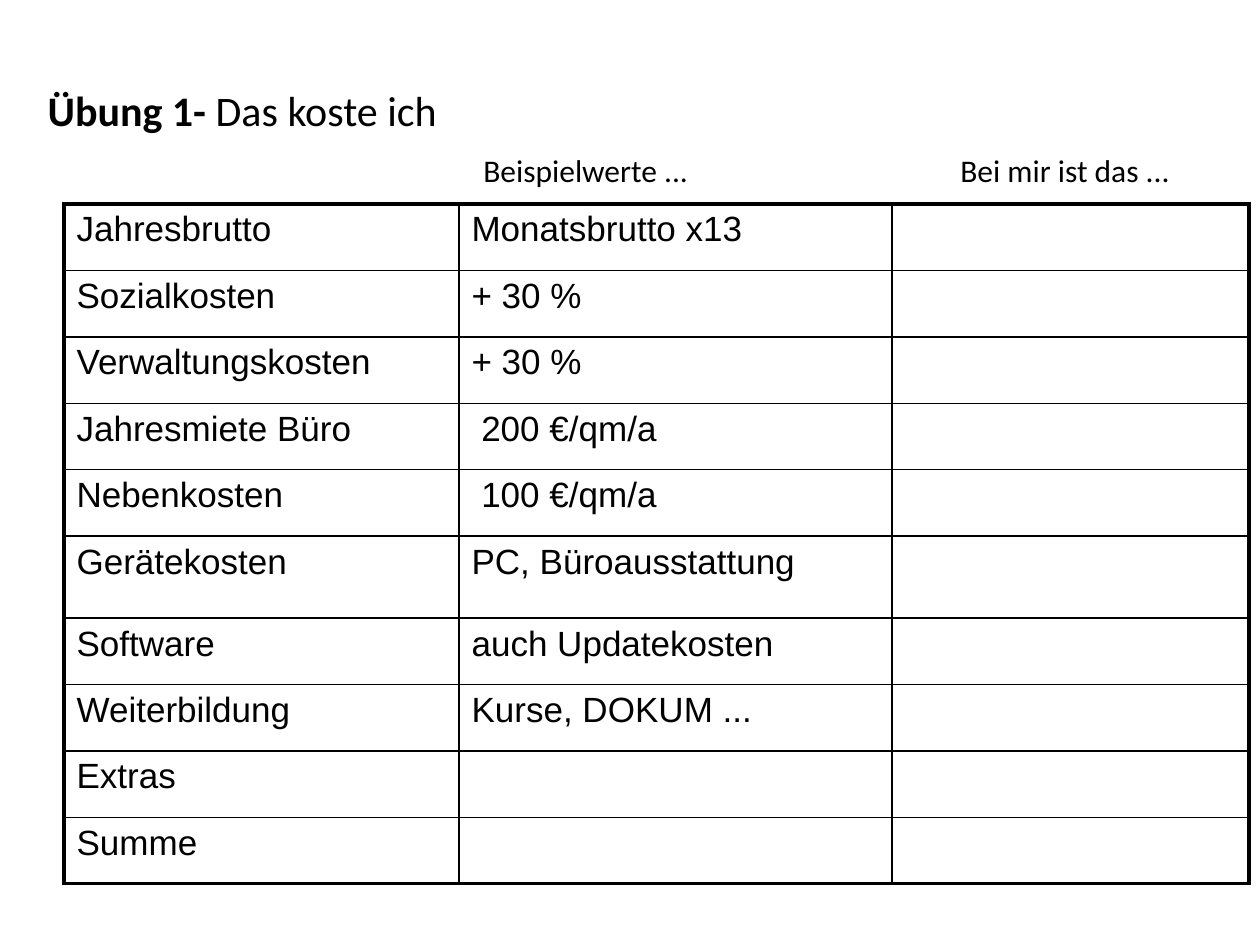
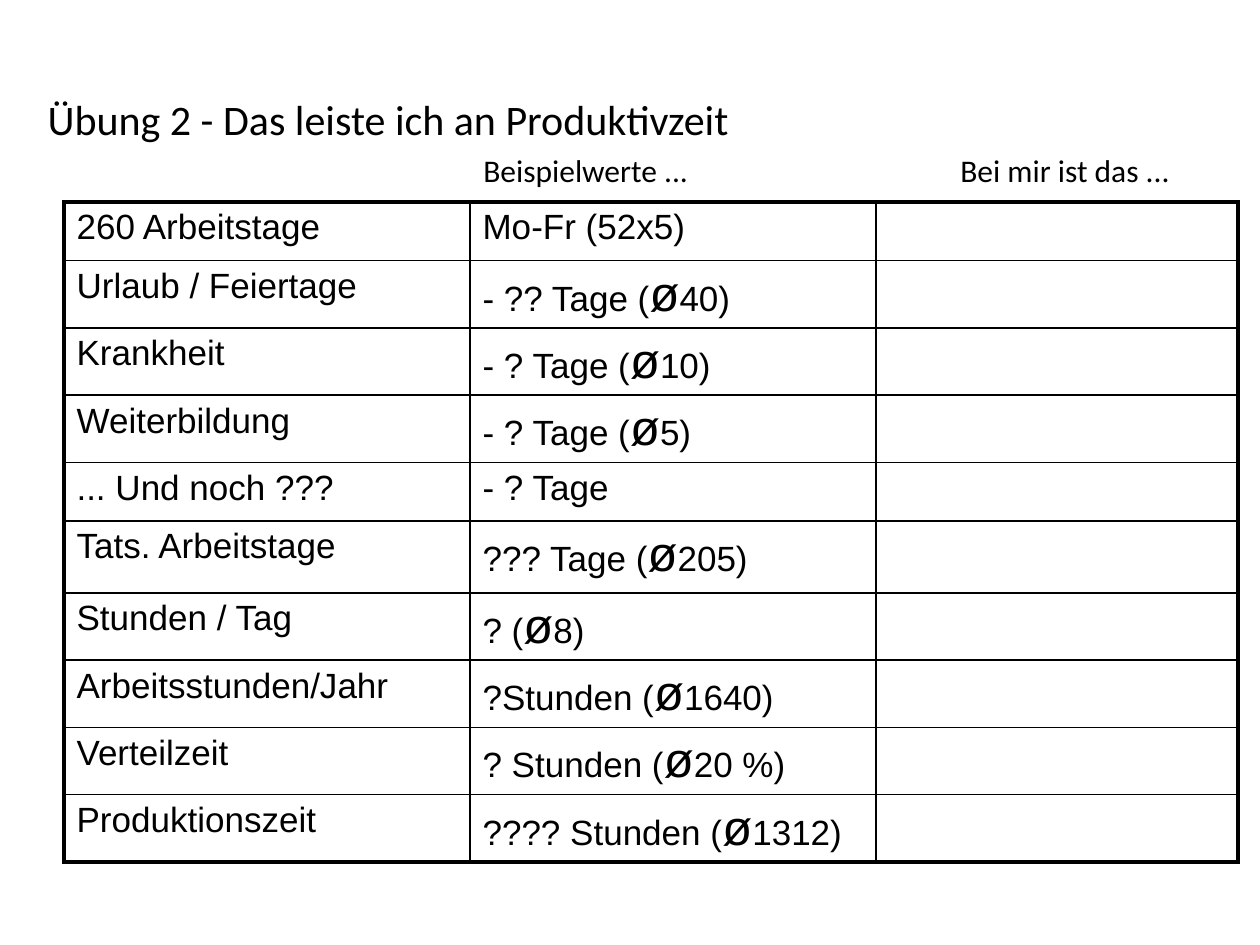
from pptx import Presentation
from pptx.dml.color import RGBColor
from pptx.enum.text import MSO_ANCHOR, MSO_AUTO_SIZE, PP_ALIGN
from pptx.oxml.ns import qn
from pptx.util import Emu, Pt
from lxml.etree import SubElement

PX_PER_INCH = 126
COLORS = {"ink": "000000", "paper": "FFFFFF"}
TITLE_FONT, TABLE_FONT = "Calibri", "Arial"
TITLE_SIZE, HEADING_SIZE, CELL_SIZE, AVERAGE_SIZE = 24, 18, 20, 28
OUTER_LINE, INNER_LINE = 2.25, 1
TALL_ROW = 5
HEADINGS = [("Beispielwerte ...", 471, 250), ("Bei mir ist das ...", 948, 261)]

COSTS = [
    ("Jahresbrutto", "Monatsbrutto x13"),
    ("Sozialkosten", "+ 30 %"),
    ("Verwaltungskosten", "+ 30 %"),
    ("Jahresmiete Büro", " 200 €/qm/a"),
    ("Nebenkosten", " 100 €/qm/a"),
    ("Gerätekosten", "PC, Büroausstattung"),
    ("Software", "auch Updatekosten"),
    ("Weiterbildung", "Kurse, DOKUM ..."),
    ("Extras", ""),
    ("Summe", ""),
]
WORKING_TIME = [
    ("260 Arbeitstage", "Mo-Fr (52x5)"),
    ("Urlaub / Feiertage", "- ?? Tage (ø40)"),
    ("Krankheit", "- ? Tage (ø10)"),
    ("Weiterbildung", "- ? Tage (ø5)"),
    ("... Und noch ???", "- ? Tage"),
    ("Tats. Arbeitstage", "??? Tage (ø205)"),
    ("Stunden / Tag", "? (ø8)"),
    ("Arbeitsstunden/Jahr", "?Stunden (ø1640)"),
    ("Verteilzeit", "? Stunden (ø20 %)"),
    ("Produktionszeit", "???? Stunden (ø1312)"),
]


def px(length):
    return Emu(round(length * 914400 / PX_PER_INCH))


def rgb(name):
    return RGBColor.from_string(COLORS[name])


def style_font(font, family, size, bold=False):
    font.name = family
    font.size = Pt(size)
    font.bold = bold
    font.color.rgb = rgb("ink")


def write_part(paragraph, text, family, size, bold=False):
    part = paragraph.add_run()
    part.text = text
    style_font(part.font, family, size, bold)


def space_before(paragraph, percent):
    spacing = SubElement(paragraph._p.get_or_add_pPr(), qn("a:spcBef"))
    SubElement(spacing, qn("a:spcPct"), val=str(percent * 1000))


def add_title(slide, lead, rest, top, width):
    title = slide.shapes.title
    title.left, title.top, title.width, title.height = map(px, (35, top, width, 63))
    frame = title.text_frame
    frame.auto_size = MSO_AUTO_SIZE.NONE
    frame.vertical_anchor = MSO_ANCHOR.MIDDLE
    paragraph = frame.paragraphs[0]
    paragraph.alignment = PP_ALIGN.LEFT
    if lead:
        write_part(paragraph, lead, TITLE_FONT, TITLE_SIZE, bold=True)
    write_part(paragraph, rest, TITLE_FONT, TITLE_SIZE)


def add_heading(slide, text, left, width):
    frame = slide.shapes.add_textbox(*map(px, (left, 145, width, 50))).text_frame
    frame.word_wrap = True
    paragraph = frame.paragraphs[0]
    paragraph.text = text
    space_before(paragraph, 20)
    style_font(paragraph.runs[0].font, TITLE_FONT, HEADING_SIZE)


def write_cell(cell, text):
    paragraph = cell.text_frame.paragraphs[0]
    space_before(paragraph, 20)
    before, average, after = text.partition("ø")
    for part, size in ((before, CELL_SIZE), (average, AVERAGE_SIZE), (after, CELL_SIZE)):
        if part:
            write_part(paragraph, part, TABLE_FONT, size)
    if not text:
        style_font(paragraph.font, TABLE_FONT, CELL_SIZE)


def draw_borders(cell, outer_sides):
    properties = cell._tc.get_or_add_tcPr()
    for side, is_outer in zip("LRTB", outer_sides):
        width = Pt(OUTER_LINE if is_outer else INNER_LINE)
        line = SubElement(properties, qn(f"a:ln{side}"), w=str(width))
        fill = SubElement(line, qn("a:solidFill"))
        SubElement(fill, qn("a:srgbClr"), val=COLORS["ink"])


def add_worksheet(slide, entries, top, column_widths, height, tall_height):
    row_count, column_count = len(entries), len(column_widths)
    table = slide.shapes.add_table(
        row_count, column_count, *map(px, (64, top, sum(column_widths), height))
    ).table
    table.first_row = table.horz_banding = False
    for column, width in zip(table.columns, column_widths):
        column.width = px(width)
    normal_height = (height - tall_height) / (row_count - 1)
    for r, entry in enumerate(entries):
        table.rows[r].height = px(tall_height if r == TALL_ROW else normal_height)
        for c, text in enumerate((*entry, "")):
            cell = table.cell(r, c)
            write_cell(cell, text)
            draw_borders(cell, (c == 0, c == column_count - 1, r == 0, r == row_count - 1))
            cell.fill.background()


def add_exercise(deck, title, worksheet):
    slide = deck.slides.add_slide(deck.slide_layouts[5])
    slide.background.fill.solid()
    slide.background.fill.fore_color.rgb = rgb("paper")
    add_title(slide, *title)
    add_worksheet(slide, *worksheet)
    for heading in HEADINGS:
        add_heading(slide, *heading)


def main():
    deck = Presentation()
    deck.slide_width, deck.slide_height = px(1260), px(945)
    add_exercise(
        deck,
        ("Übung 1- ", "Das koste ich", 78, 475),
        (COSTS, 204, (395, 433, 357), 680, 82),
    )
    add_exercise(
        deck,
        ("", "Übung 2 - Das leiste ich an Produktivzeit", 87, 872),
        (WORKING_TIME, 202, (406, 406, 362), 599, 72),
    )
    deck.save("out.pptx")


if __name__ == "__main__":
    main()
